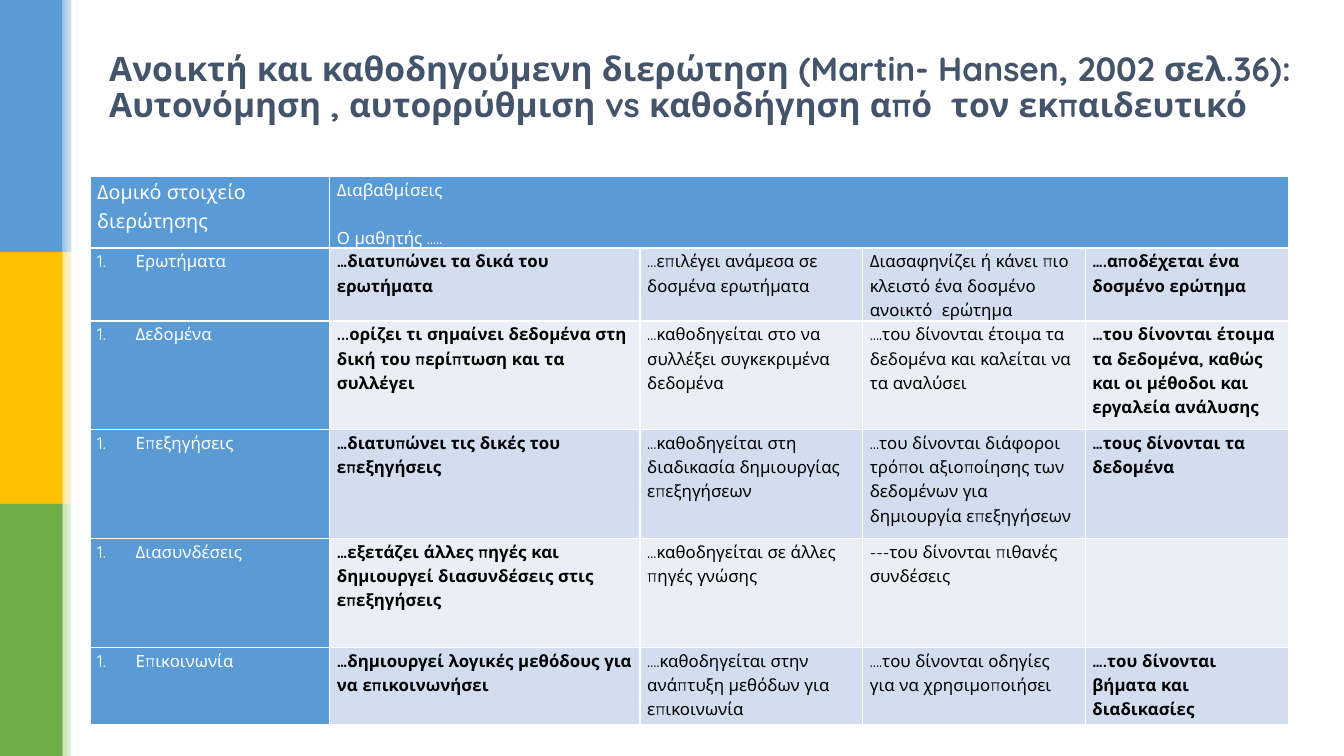
from lxml.etree import SubElement
from pptx import Presentation
from pptx.dml.color import RGBColor
from pptx.enum.shapes import MSO_SHAPE
from pptx.enum.text import MSO_ANCHOR
from pptx.oxml import parse_xml
from pptx.oxml.ns import nsdecls, qn
from pptx.util import Cm, Pt

FONT = "Quicksand"
BLUE, WHITE, BLACK, SLATE = "5B9BD5", "FFFFFF", "000000", "44546A"
ROW_BANDS = ["D2DEEF", "EAEFF7"]
SIDE_BANDS = [(BLUE, "9DC3E6"), ("FFC000", "FFE699"), ("70AD47", "C5E0B4")]
BAND_HEIGHT = 6.35
COLUMN_WIDTHS = [6.04, 7.82, 5.61, 5.61, 5.12]
ROW_HEIGHTS = [1.8, 1.84, 2.74, 2.74, 2.74, 1.95]
BOLD_COLUMNS = {1, 4}
TITLE = (
    "Ανοικτή και καθοδηγούμενη διερώτηση (Martin- Hansen, 2002 σελ.36):\v"
    "Αυτονόμηση , αυτορρύθμιση vs καθοδήγηση από  τον εκπαιδευτικό"
)
INQUIRY_ROWS = [
    ["Ερωτήματα",
     "…διατυπώνει τα δικά του ερωτήματα",
     "…επιλέγει ανάμεσα σε δοσμένα ερωτήματα",
     "Διασαφηνίζει ή κάνει πιο κλειστό ένα δοσμένο ανοικτό  ερώτημα",
     "….αποδέχεται ένα δοσμένο ερώτημα"],
    ["Δεδομένα",
     "...ορίζει τι σημαίνει δεδομένα στη δική του περίπτωση και τα συλλέγει",
     "…καθοδηγείται στο να συλλέξει συγκεκριμένα δεδομένα",
     "….του δίνονται έτοιμα τα δεδομένα και καλείται να τα αναλύσει",
     "…του δίνονται έτοιμα τα δεδομένα, καθώς και οι μέθοδοι και εργαλεία ανάλυσης"],
    ["Επεξηγήσεις",
     "…διατυπώνει τις δικές του επεξηγήσεις",
     "…καθοδηγείται στη διαδικασία δημιουργίας επεξηγήσεων",
     "…του δίνονται διάφοροι τρόποι αξιοποίησης των δεδομένων για δημιουργία επεξηγήσεων",
     "…τους δίνονται τα δεδομένα"],
    ["Διασυνδέσεις",
     "…εξετάζει άλλες πηγές και δημιουργεί διασυνδέσεις στις επεξηγήσεις",
     "…καθοδηγείται σε άλλες πηγές γνώσης",
     "---του δίνονται πιθανές συνδέσεις",
     ""],
    ["Επικοινωνία",
     "…δημιουργεί λογικές μεθόδους για να επικοινωνήσει",
     "….καθοδηγείται στην ανάπτυξη μεθόδων για επικοινωνία",
     "….του δίνονται οδηγίες για να χρησιμοποιήσει",
     "….του δίνονται βήματα και διαδικασίες"],
]


def color(value):
    """Turn a hex string into a colour."""
    return RGBColor.from_string(value)


def style_paragraph(para, size, ink, bold=False, spacing=1.15):
    """Set the font and line spacing of a paragraph."""
    para.line_spacing = spacing
    para.font.name = FONT
    para.font.size = Pt(size)
    para.font.bold = bold
    para.font.color.rgb = color(ink)


def add_block(page, left, top, width, height, fill, fade=None):
    """Add a rectangle, plain or fading from left to right."""
    block = page.shapes.add_shape(
        MSO_SHAPE.RECTANGLE, Cm(left), Cm(top), Cm(width), Cm(height))
    block.shadow.inherit = False
    block.line.fill.background()
    if fade:
        block.fill.gradient()
        block.fill.gradient_angle = 0
        for stop, tone in zip(block.fill.gradient_stops, (fill, fade)):
            stop.color.rgb = color(tone)
    else:
        block.fill.solid()
        block.fill.fore_color.rgb = color(fill)


def add_side_bands(page):
    """Add the coloured strip along the left edge."""
    for index, (strong, pale) in enumerate(SIDE_BANDS):
        top = index * BAND_HEIGHT
        add_block(page, 0, top, 1.58, BAND_HEIGHT, strong)
        add_block(page, 1.58, top, 0.4, BAND_HEIGHT, pale, WHITE)
    add_block(page, 1.8, 0, 0.13, 3 * BAND_HEIGHT, WHITE)


def add_title(page):
    """Add the two-line heading."""
    box = page.shapes.add_textbox(Cm(2.5), Cm(0.64), Cm(30.48), Cm(3.18))
    frame = box.text_frame
    frame.word_wrap = True
    frame.vertical_anchor = MSO_ANCHOR.MIDDLE
    frame.text = TITLE
    style_paragraph(frame.paragraphs[0], 24, SLATE, bold=True, spacing=0.9)


def format_cell(cell, fill):
    """Set the fill, margins and white borders of a cell."""
    cell.fill.solid()
    cell.fill.fore_color.rgb = color(fill)
    cell.margin_left = cell.margin_right = Cm(0.18)
    cell.margin_top = cell.margin_bottom = 0
    properties = cell._tc.get_or_add_tcPr()
    for index, side in enumerate("LRTB"):
        properties.insert(index, parse_xml(
            f'<a:ln{side} {nsdecls("a")} w="12700"><a:solidFill>'
            f'<a:srgbClr val="{WHITE}"/></a:solidFill></a:ln{side}>'))


def number_paragraph(para):
    """Give a paragraph a number with a hanging indent."""
    properties = para._p.get_or_add_pPr()
    properties.set("marL", str(Cm(0.97)))
    properties.set("indent", str(-Cm(0.97)))
    SubElement(properties, qn("a:buAutoNum"), type="arabicPeriod")


def write_cell(cell, text, size, ink, bold=False, numbered=False):
    """Write text into a cell, one paragraph a line."""
    cell.text = text
    for para in cell.text_frame.paragraphs:
        if numbered:
            number_paragraph(para)
        style_paragraph(para, size, ink, bold)


def add_inquiry_table(page):
    """Add the table of inquiry elements and their gradations."""
    table = page.shapes.add_table(
        len(ROW_HEIGHTS), len(COLUMN_WIDTHS), Cm(2.27), Cm(4.45),
        Cm(sum(COLUMN_WIDTHS)), Cm(sum(ROW_HEIGHTS))).table
    table.first_row = table.horz_banding = False
    for column, width in zip(table.columns, COLUMN_WIDTHS):
        column.width = Cm(width)
    for row, height in zip(table.rows, ROW_HEIGHTS):
        row.height = Cm(height)

    for cell in table.rows[0].cells:
        format_cell(cell, BLUE)
    table.cell(0, 1).merge(table.cell(0, 4))
    write_cell(table.cell(0, 0), "Δομικό στοιχείο διερώτησης", 14, WHITE)
    write_cell(table.cell(0, 1), "Διαβαθμίσεις\nΟ μαθητής …..", 12, WHITE)
    table.cell(0, 1).text_frame.paragraphs[1].space_before = Pt(17)

    for row, texts in enumerate(INQUIRY_ROWS, start=1):
        for column, text in enumerate(texts):
            cell = table.cell(row, column)
            is_label = column == 0
            format_cell(cell, BLUE if is_label else ROW_BANDS[(row - 1) % 2])
            if text:
                write_cell(cell, text, 12, WHITE if is_label else BLACK,
                           column in BOLD_COLUMNS, is_label)


def main():
    """Build the slide and save it."""
    deck = Presentation()
    deck.slide_width, deck.slide_height = Cm(33.87), Cm(19.05)
    page = deck.slides.add_slide(deck.slide_layouts[6])
    add_side_bands(page)
    add_title(page)
    add_inquiry_table(page)
    deck.save("out.pptx")


if __name__ == "__main__":
    main()
